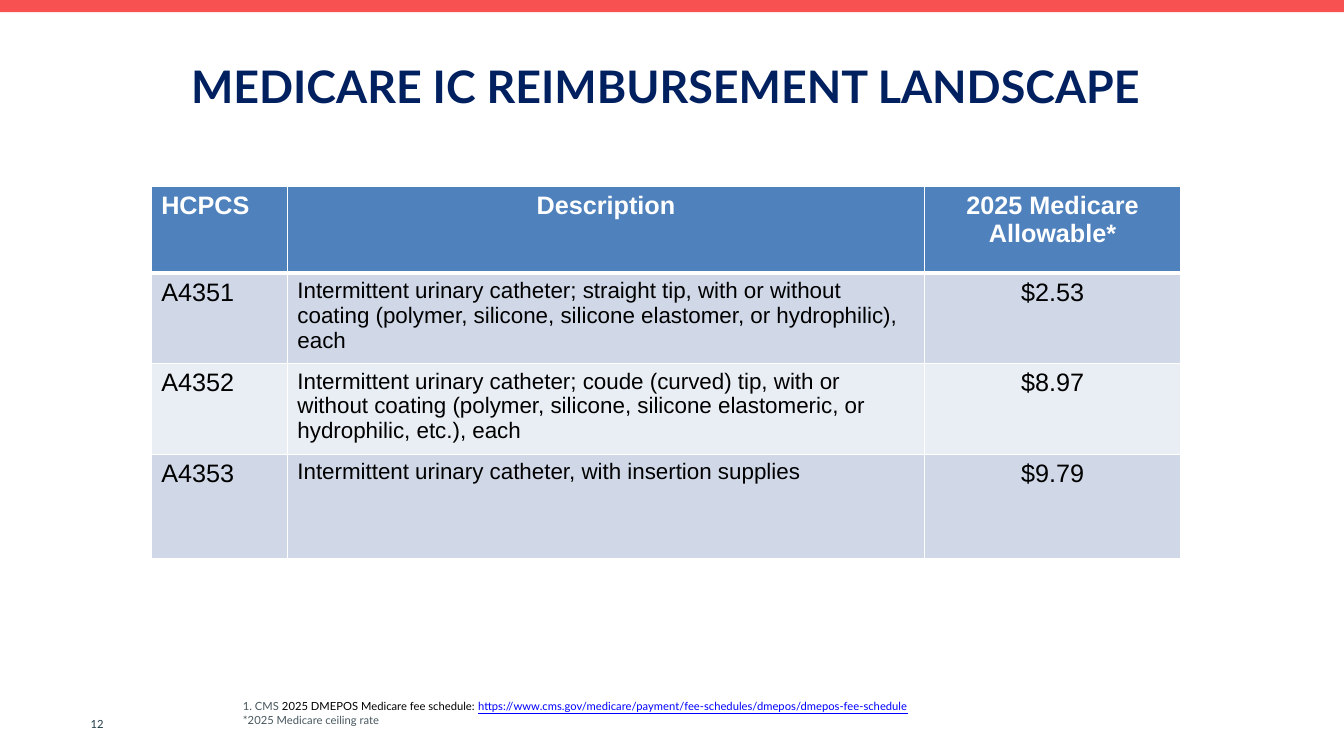
from lxml.etree import SubElement
from pptx import Presentation
from pptx.dml.color import RGBColor
from pptx.enum.shapes import MSO_SHAPE as Shape
from pptx.enum.text import MSO_ANCHOR as Anchor, PP_ALIGN as Align
from pptx.oxml.ns import qn
from pptx.util import Inches, Pt

COLORS = {
    "accent": "F75152", "title": "002060", "number": "213D46", "note": "47575E",
    "link": "0000FF", "header": "4F81BD", "band": "D0D8E8", "light": "E9EDF4",
    "white": "FFFFFF", "black": "000000",
}
HEADINGS = ("HCPCS", "Description", "2025 Medicare Allowable*")
CODES = [
    ("A4351", "Intermittent urinary catheter; straight tip, with or without coating "
     "(polymer, silicone, silicone elastomer, or hydrophilic), each", "$2.53"),
    ("A4352", "Intermittent urinary catheter; coude (curved) tip, with or without coating "
     "(polymer, silicone, silicone elastomeric, or hydrophilic, etc.), each", "$8.97"),
    ("A4353", "Intermittent urinary catheter, with insertion supplies", "$9.79"),
]
FOOTNOTES = [
    [("1. CMS", "note"), (" 2025 DMEPOS Medicare fee schedule: ", "black"),
     ("https://www.cms.gov/medicare/payment/fee-schedules/dmepos/dmepos-fee-schedule", "link")],
    [("*2025 Medicare ceiling rate", "note")],
]


class SlideBuilder:
    """Holds the style and the current slide."""

    def __init__(self, deck):
        self.slide = deck.slides.add_slide(deck.slide_layouts[5])
        self.text_font, self.table_font = "Lato", "Arial"

    def color(self, name):
        return RGBColor.from_string(COLORS[name])

    def style(self, font, face, size, color, bold=False):
        font.name, font.size, font.bold = face, Pt(size), bold
        font.color.rgb = self.color(color)

    def place(self, item, box):
        item.left, item.top, item.width, item.height = map(Inches, box)

    def remove_insets(self, frame):
        frame.margin_left = frame.margin_top = frame.margin_right = frame.margin_bottom = 0

    def title(self, wording, box):
        heading = self.slide.shapes.title
        self.place(heading, box)
        frame = heading.text_frame
        frame.text = wording
        frame.word_wrap, frame.vertical_anchor = True, Anchor.TOP
        self.remove_insets(frame)
        line = frame.paragraphs[0]
        line.alignment, line.line_spacing = Align.CENTER, Pt(43.2)
        self.style(line.runs[0].font, self.text_font, 32, "title", True)

    def bar(self, box, color):
        band = self.slide.shapes.add_shape(Shape.RECTANGLE, *map(Inches, box))
        band.shadow.inherit = False
        band.fill.solid()
        band.fill.fore_color.rgb = self.color(color)
        band.line.fill.background()

    def small_text(self, lines, box, inset=True):
        frame = self.slide.shapes.add_textbox(*map(Inches, box)).text_frame
        frame.word_wrap = True
        if not inset:
            self.remove_insets(frame)
        for index, pieces in enumerate(lines):
            line = frame.add_paragraph() if index else frame.paragraphs[0]
            for wording, color in pieces:
                run = line.add_run()
                run.text = wording
                self.style(run.font, self.text_font, 8, color)
                run.font.underline = color == "link"

    def borders(self, cell, widths):
        properties = cell._tc.get_or_add_tcPr()
        for side, width in zip("LRTB", widths):
            edge = SubElement(properties, qn(f"a:ln{side}"), w=str(Pt(width)))
            fill = SubElement(edge, qn("a:solidFill"))
            SubElement(fill, qn("a:srgbClr"), val=COLORS["white"])

    def cell(self, cell, wording, row, column):
        self.borders(cell, (1, 1, 3 if row == 1 else 1, 3 if row == 0 else 1))
        cell.fill.solid()
        fill = "header" if row == 0 else "band" if row % 2 else "light"
        cell.fill.fore_color.rgb = self.color(fill)
        cell.text_frame.text = wording
        line = cell.text_frame.paragraphs[0]
        centred = column == 2 or (row == 0 and column == 1)
        line.alignment = Align.CENTER if centred else Align.LEFT
        size = 16 if row and column == 1 else 18
        self.style(line.runs[0].font, self.table_font, size,
                   "black" if row else "white", row == 0)

    def table(self, rows, box, widths, heights):
        grid = self.slide.shapes.add_table(
            len(rows), len(widths), *map(Inches, box)).table
        for column, width in zip(grid.columns, widths):
            column.width = Inches(width)
        for row, height in zip(grid.rows, heights):
            row.height = Inches(height)
        for r, values in enumerate(rows):
            for c, wording in enumerate(values):
                self.cell(grid.cell(r, c), wording, r, c)


def main():
    deck = Presentation()
    deck.slide_width, deck.slide_height = Inches(13.33), Inches(7.5)
    builder = SlideBuilder(deck)
    builder.title("MEDICARE IC REIMBURSEMENT LANDSCAPE", (0.55, 0.52, 12.11, 1.09))
    builder.bar((0, 0, 13.33, 0.12), "accent")
    builder.small_text([[("12", "number")]], (0.8, 7.07, 1.03, 0.15))
    builder.small_text(FOOTNOTES, (2.41, 6.94, 10.58, 0.4), inset=False)
    builder.table([HEADINGS, *CODES], (1.5, 1.85, 10.21, 3.01),
                  (1.35, 6.32, 2.54), (0.86, 0.46, 0.66, 1.03))
    deck.save("out.pptx")


if __name__ == "__main__":
    main()
